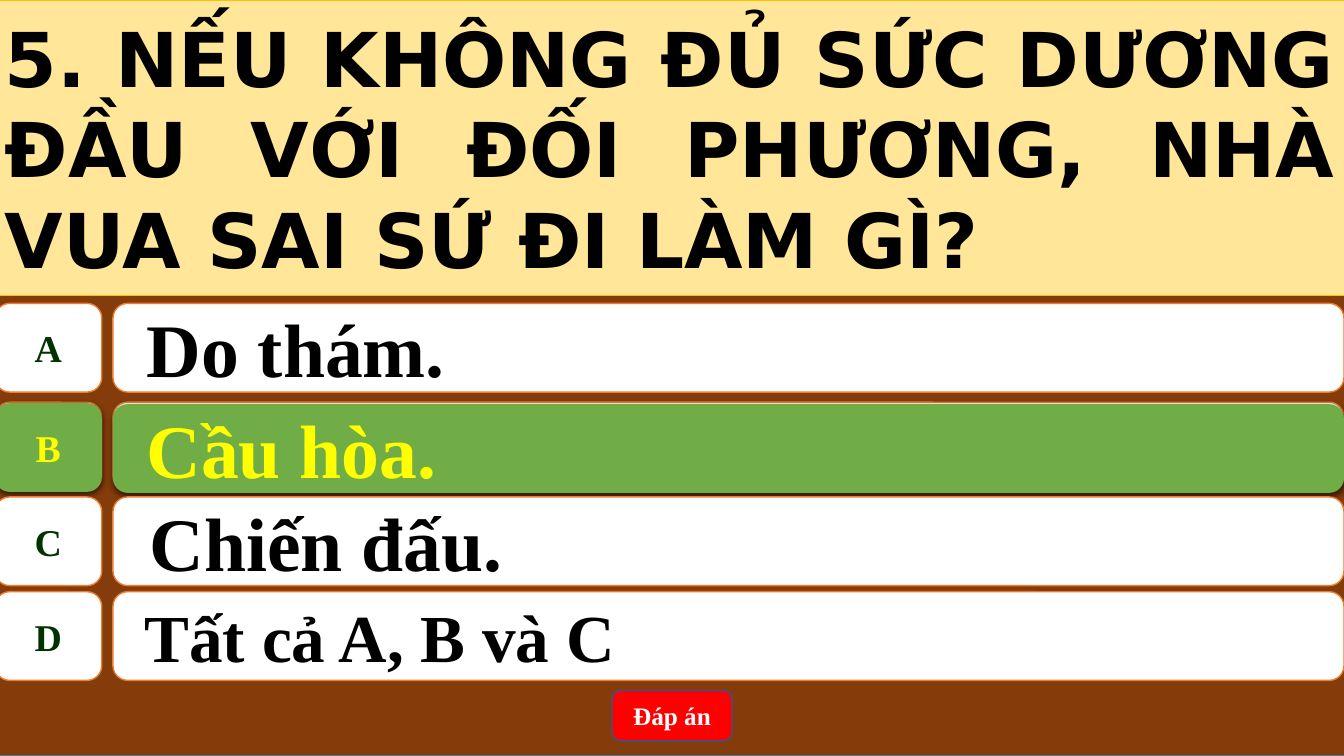
from dataclasses import dataclass

from lxml import etree
from pptx import Presentation
from pptx.dml.color import RGBColor
from pptx.enum.shapes import MSO_SHAPE
from pptx.enum.text import MSO_ANCHOR, PP_ALIGN
from pptx.oxml.ns import qn
from pptx.util import Emu, Pt

RECT = MSO_SHAPE.RECTANGLE
ROUND = MSO_SHAPE.ROUNDED_RECTANGLE
CARD = MSO_SHAPE.FLOWCHART_ALTERNATE_PROCESS
MIDDLE = MSO_ANCHOR.MIDDLE
LEFT, CENTER, JUSTIFY = PP_ALIGN.LEFT, PP_ALIGN.CENTER, PP_ALIGN.JUSTIFY
PX = 9144  # 100 px to the inch


@dataclass(frozen=True)
class Theme:
    brown: str = "843C0B"
    frame: str = "43739E"
    cream: str = "FFE699"
    gold: str = "FFC000"
    white: str = "FFFFFF"
    orange: str = "ED7D31"
    black: str = "000000"
    dark_green: str = "003300"
    green: str = "70AD47"
    yellow: str = "FFFF00"
    red: str = "FF0000"
    blue: str = "325491"
    serif: str = "Times New Roman"
    sans: str = "DejaVu Sans"
    big: int = 54
    medium: int = 48
    letter: int = 27
    small: int = 18


class QuizSlide:
    def __init__(self, slide, theme):
        self.s = slide
        self.t = theme

    def box(self, shapes, kind, rect, fill, line=None, width=1):
        sp = shapes.add_shape(kind, *(Emu(v * PX) for v in rect))
        sp.shadow.inherit = False
        sp.fill.solid()
        sp.fill.fore_color.rgb = RGBColor.from_string(fill)
        if line:
            sp.line.color.rgb = RGBColor.from_string(line)
            sp.line.width = Pt(width)
        else:
            sp.line.fill.background()
        return sp

    def text(self, sp, words, size, color, align=CENTER, font=None, indent=0, wrap=True):
        tf = sp.text_frame
        tf.word_wrap = wrap
        tf.vertical_anchor = MIDDLE
        tf.margin_left = Emu((10 + indent) * PX)
        p = tf.paragraphs[0]
        p.alignment = align
        r = p.add_run()
        r.text = words
        r.font.name = font or self.t.serif
        r.font.size = Pt(size)
        r.font.bold = True
        r.font.color.rgb = RGBColor.from_string(color)

    def drop_shadow(self, sp):
        effects = sp._element.spPr.find(qn("a:effectLst"))
        shadow = etree.SubElement(effects, qn("a:outerShdw"), blurRad="57150",
                                  dist="19050", dir="5400000", algn="ctr", rotWithShape="0")
        color = etree.SubElement(shadow, qn("a:srgbClr"), val=self.t.black)
        etree.SubElement(color, qn("a:alpha"), val="63000")

    def cards(self, top, fill, line=None, nudge=0):
        """Group a letter card with its answer card."""
        shapes = self.s.shapes.add_group_shape().shapes
        letter = self.box(shapes, CARD, (-5, top, 106, 88), fill, line)
        answer = self.box(shapes, ROUND, (112, top + nudge, 1221, 88), fill, line)
        return letter, answer

    def answer(self, top, name, words, size, indent, correct=False):
        t = self.t
        letter, answer = self.cards(top, t.white, t.orange)
        letter_color, answer_color = t.dark_green, t.black
        if correct:
            # Green cards lie on the white ones, whose orange edge shows above
            letter, answer = self.cards(top + 1, t.green, nudge=1)
            letter_color = answer_color = t.yellow
            for sp in (letter, answer):
                self.drop_shadow(sp)
        self.text(letter, name, t.letter, letter_color, wrap=False)
        self.text(answer, words, size, answer_color, LEFT, indent=indent)


def main():
    prs = Presentation()
    prs.slide_width, prs.slide_height = Emu(1333 * PX), Emu(750 * PX)
    t = Theme()
    quiz = QuizSlide(prs.slides.add_slide(prs.slide_layouts[6]), t)
    shapes = quiz.s.shapes

    # Backdrop
    quiz.box(shapes, RECT, (-5, 0, 1339, 750), t.brown, t.frame)

    # Question
    question = quiz.box(shapes, RECT, (-5, 0, 1339, 293), t.cream, t.gold, 0.5)
    quiz.text(question, "5. NẾU KHÔNG ĐỦ SỨC DƯƠNG ĐẦU VỚI ĐỐI PHƯƠNG, "
              "NHÀ VUA SAI SỨ ĐI LÀM GÌ?", t.big, t.black, JUSTIFY, t.sans)

    # Answers: top, letter, words, size, indent
    quiz.answer(301, "A", "Do thám.", t.big, 19)
    quiz.answer(399, "B", "Cầu hòa.", t.big, 19, correct=True)
    quiz.answer(493, "C", "Chiến đấu.", t.big, 22)
    quiz.answer(587, "D", "Tất cả A, B và C", t.medium, 17)

    # Answer button
    button = quiz.box(shapes, ROUND, (607, 685, 119, 50), t.red, t.blue)
    quiz.text(button, "Đáp án", t.small, t.white)

    prs.save("out.pptx")


if __name__ == "__main__":
    main()
